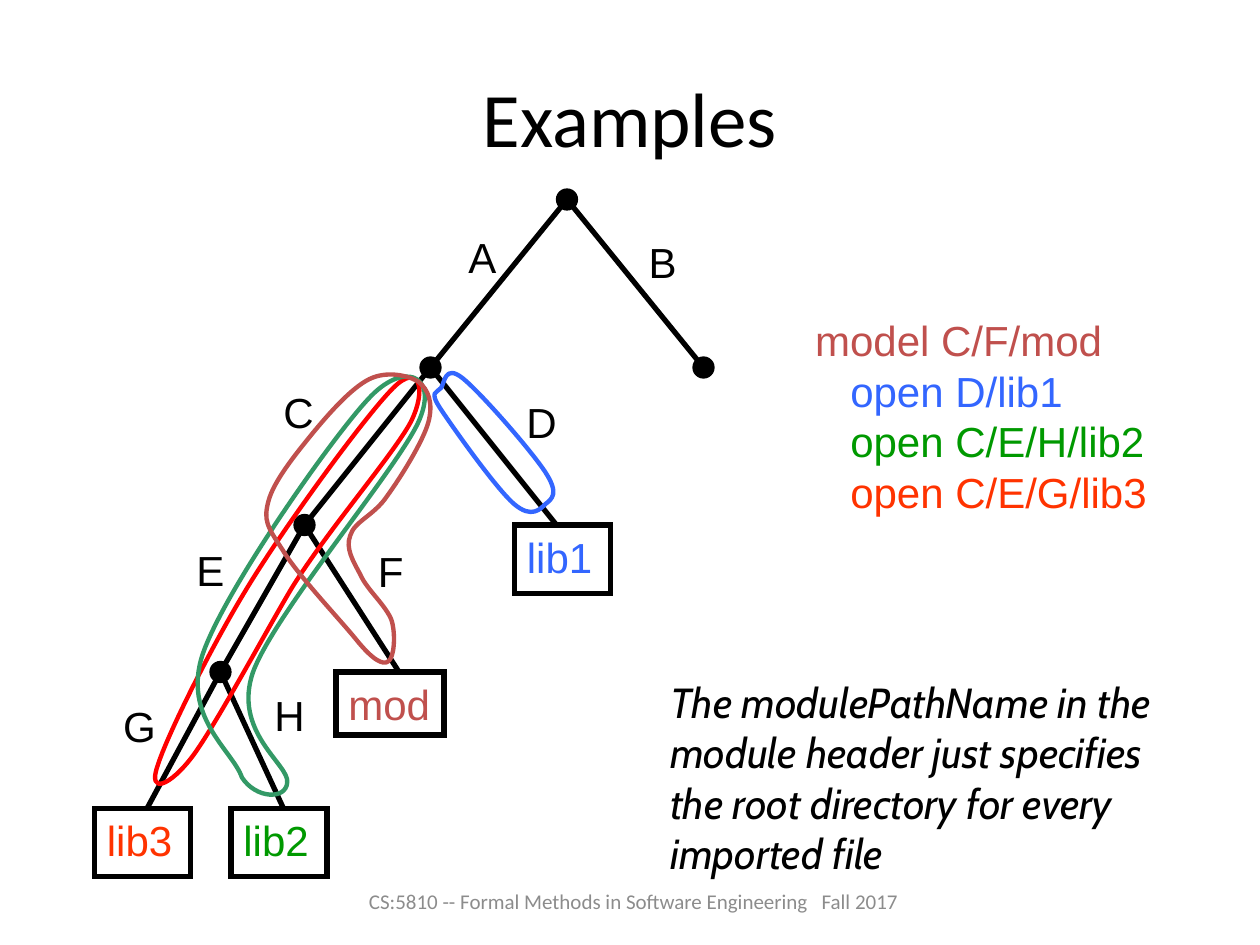
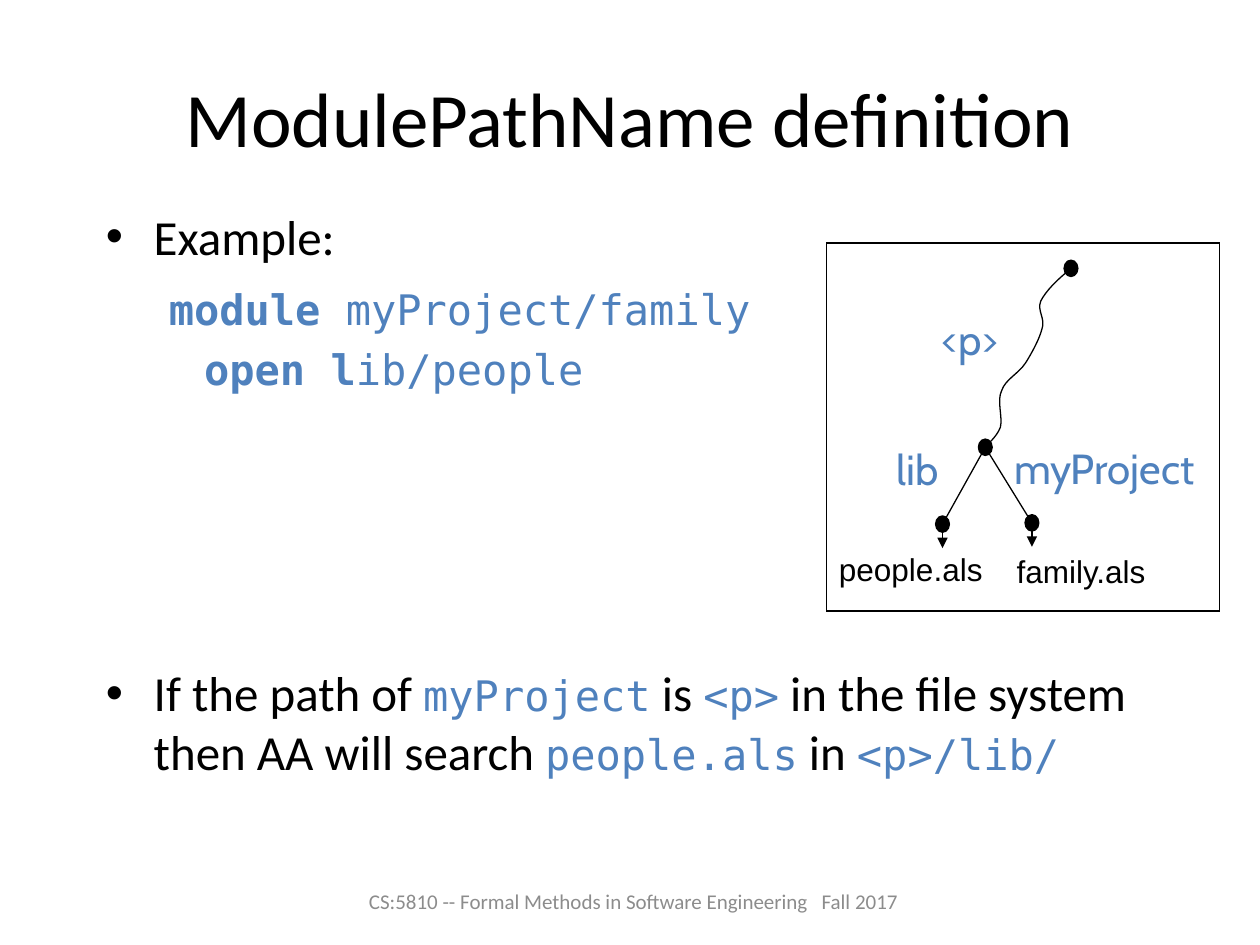
from lxml import etree
from pptx import Presentation
from pptx import util as u
from pptx.dml.color import RGBColor
from pptx.enum import shapes, text
from pptx.oxml import ns

COLORS = {
    "black": "000000", "gray": "8C8C8C", "code": "4F81BD", "brick": "C0504D",
    "blue": "3366FF", "green": "009900", "orange": "FF3300",
    "red": "FF0000", "sea": "339966",
}
CELL = 1 / 12  # the directory tree sits on a grid of twelfths of an inch
FOOTER = "CS:5810 -- Formal Methods in Software Engineering   Fall 2017"

TREE_NODES = {"root": (54, 19), "left": (41, 35), "right": (67, 35),
              "fork": (29, 50), "deep": (21, 64)}
TREE_LEAVES = {"lib1": (53, 50), "mod": (38, 64), "lib3": (14, 77), "lib2": (27, 77)}
TREE_EDGES = [("root", "left"), ("root", "right"), ("left", "lib1"), ("left", "fork"),
              ("fork", "deep"), ("fork", "mod"), ("deep", "lib3"), ("deep", "lib2")]
# file: column, row, width, height, colour
FILE_BOXES = {"lib3": (9, 77, 9.15, 6.5, "orange"), "lib1": (49, 50, 9.15, 6.5, "blue"),
              "lib2": (22, 77, 9.15, 6.5, "green"), "mod": (32, 64, 10.3, 6, "brick")}
EDGE_LABELS = {"A": (3.62, 1.79), "B": (5.05, 1.83), "C": (2.15, 3.02), "D": (4.08, 3.1),
               "E": (1.46, 4.27), "F": (2.9, 4.28), "G": (0.88, 5.51), "H": (2.08, 5.42)}
# Bezier points in inches: a start, then two handles and an end for each segment
PATH_LOOPS = {
    "red": [(2.32, 4.66), (2.6, 4.21), (3.12, 3.61), (3.26, 3.35),
            (3.39, 3.09), (3.33, 2.87), (3.12, 3.08), (2.91, 3.29), (2.3, 4.12), (1.99, 4.62),
            (1.68, 5.12), (1.32, 5.85), (1.25, 6.08), (1.17, 6.31), (1.35, 6.24), (1.53, 6),
            (1.71, 5.76), (2.15, 4.94), (2.32, 4.66)],
    "sea": [(1.92, 6.17), (2.03, 6.34), (2.27, 6.35), (2.28, 6.21),
            (2.3, 6.07), (1.84, 5.81), (2.01, 5.33), (2.19, 4.85), (3.18, 3.69), (3.33, 3.33),
            (3.48, 2.97), (3.2, 2.86), (2.92, 3.17), (2.63, 3.48), (1.78, 4.69), (1.61, 5.19),
            (1.44, 5.69), (1.85, 5.96), (1.92, 6.17)],
    "blue": [(4.08, 4), (4.22, 4.12), (4.29, 4.04), (4.33, 4),
             (4.38, 3.96), (4.44, 3.92), (4.33, 3.75), (4.22, 3.58), (3.81, 3.11), (3.67, 3),
             (3.53, 2.89), (3.53, 3.04), (3.5, 3.08), (3.47, 3.12), (3.4, 3.1), (3.5, 3.25),
             (3.6, 3.4), (3.94, 3.88), (4.08, 4)],
    "brick": [(2.83, 5.08), (2.96, 5.24), (3.04, 5.28), (3.08, 5.25),
              (3.13, 5.22), (3.14, 5.04), (3.11, 4.93), (3.07, 4.81), (2.91, 4.68), (2.86, 4.56),
              (2.8, 4.45), (2.74, 4.35), (2.78, 4.25), (2.81, 4.14), (2.97, 4.09), (3.07, 3.94),
              (3.18, 3.79), (3.36, 3.5), (3.4, 3.35), (3.44, 3.2), (3.4, 3.09), (3.32, 3.03),
              (3.24, 2.98), (3.07, 2.94), (2.93, 3.01), (2.79, 3.08), (2.62, 3.27), (2.48, 3.44),
              (2.35, 3.6), (2.17, 3.82), (2.13, 3.98), (2.09, 4.13), (2.12, 4.18), (2.24, 4.36),
              (2.35, 4.55), (2.71, 4.93), (2.83, 5.08)],
}
PROJECT_PATH = [(8.49, 2.14), (8.39, 2.22), (8.3, 2.31), (8.26, 2.39),
                (8.23, 2.47), (8.3, 2.53), (8.27, 2.61), (8.25, 2.69), (8.19, 2.8), (8.14, 2.88),
                (8.08, 2.97), (7.98, 3.01), (7.95, 3.1), (7.91, 3.18), (7.96, 3.31), (7.94, 3.39),
                (7.91, 3.47), (7.84, 3.52), (7.81, 3.56)]


def color(name):
    return RGBColor.from_string(COLORS[name])


def inches(*values):
    return [u.Inches(value) for value in values]


def cells(*counts):
    return [count * CELL for count in counts]


def add_run(paragraph, wording, size=24, font="Arial", tint="black", bold=False, italic=False):
    run = paragraph.add_run()
    run.text = wording
    run.font.name, run.font.size = font, u.Pt(size)
    run.font.bold, run.font.italic = bold, italic
    run.font.color.rgb = color(tint)


def indent(paragraph, margin, first_line=0):
    properties = paragraph._p.get_or_add_pPr()
    properties.set("marL", str(u.Inches(margin)))
    properties.set("indent", str(u.Inches(first_line)))
    return properties


def add_label(slide, place, wording, wrap=False, **style):
    """Add a text box with one run and return its text frame."""
    frame = slide.shapes.add_textbox(*inches(*place)).text_frame
    frame.word_wrap = wrap
    add_run(frame.paragraphs[0], wording, **style)
    return frame


def outline(shape, tint, width, fill=None):
    shape.shadow.inherit = False
    if fill:
        shape.fill.solid()
        shape.fill.fore_color.rgb = color(fill)
    else:
        shape.fill.background()
    shape.line.color.rgb = color(tint)
    shape.line.width = u.Pt(width)


def add_box(slide, place, width):
    """Add an unfilled rectangle with sharp corners."""
    shape = slide.shapes.add_shape(shapes.MSO_SHAPE.RECTANGLE, *inches(*place))
    outline(shape, "black", width)
    etree.SubElement(shape.line._get_or_add_ln(), ns.qn("a:miter"), lim="800000")
    return shape


def add_dot(slide, center, width, height):
    x, y = center
    shape = slide.shapes.add_shape(shapes.MSO_SHAPE.OVAL,
                                   *inches(x - width / 2, y - height / 2, width, height))
    outline(shape, "black", 0.75, fill="black")


def add_line(slide, start, end, width, arrow=False):
    line = slide.shapes.add_connector(shapes.MSO_CONNECTOR.STRAIGHT, *inches(*start, *end))
    line.line.color.rgb = color("black")
    line.line.width = u.Pt(width)
    if arrow:
        etree.SubElement(line.line._get_or_add_ln(), ns.qn("a:tailEnd"), type="triangle")
    etree.SubElement(line._element.spPr, ns.qn("a:effectLst"))


def add_curve(slide, points, tint, width):
    """Draw a chain of cubic Bezier segments, closed when it ends where it starts."""
    builder = slide.shapes.build_freeform(*inches(*points[0]))
    builder.add_line_segments([inches(*point) for point in points[1:]],
                              close=points[0] == points[-1])
    shape = builder.convert_to_shape()
    straight = list(shape._element.iter(ns.qn("a:lnTo")))
    for first in range(0, len(points) - 1, 3):
        bezier = etree.Element(ns.qn("a:cubicBezTo"))
        straight[first].addprevious(bezier)
        for segment in straight[first:first + 3]:
            bezier.append(segment[0])
            segment.getparent().remove(segment)
    outline(shape, tint, width)


def add_slide(presentation, layout, title):
    """Add a slide with the shared title and footer."""
    slide = presentation.slides.add_slide(presentation.slide_layouts[layout])
    shape = slide.shapes.title
    shape.left, shape.top, shape.width, shape.height = inches(0.5, 0.3, 9, 1.25)
    add_run(shape.text_frame.paragraphs[0], title, 44, "Calibri")
    footer = add_label(slide, (2.51, 6.95, 5.04, 0.4), FOOTER, wrap=True,
                       size=12, font="Calibri", tint="gray")
    footer.vertical_anchor = text.MSO_ANCHOR.MIDDLE
    footer.paragraphs[0].alignment = text.PP_ALIGN.CENTER
    return slide


def draw_directory_tree(slide):
    places = {**TREE_NODES, **TREE_LEAVES}
    for parent, child in TREE_EDGES:
        add_line(slide, cells(*places[parent]), cells(*places[child]), 3)
    for center in TREE_NODES.values():
        add_dot(slide, cells(*center), 2 * CELL, 2 * CELL)
    for name, (*place, tint) in FILE_BOXES.items():
        frame = add_box(slide, cells(*place), 3).text_frame
        frame.word_wrap = False
        frame.vertical_anchor = text.MSO_ANCHOR.TOP
        frame.paragraphs[0].alignment = text.PP_ALIGN.LEFT
        add_run(frame.paragraphs[0], name, tint=tint)
    for tint, points in PATH_LOOPS.items():
        add_curve(slide, points, tint, 2.5)
    for letter, corner in EDGE_LABELS.items():
        add_label(slide, (*corner, 0.43, 0.5), letter)


def build_examples(presentation):
    slide = add_slide(presentation, 5, "Examples")
    draw_directory_tree(slide)
    model = add_label(slide, (6.37, 2.45, 3.51, 1.72), "model C/F/mod", wrap=True, tint="brick")
    for wording, tint in (("open D/lib1", "blue"), ("open C/E/H/lib2", "green"),
                          ("open C/E/G/lib3", "orange")):
        paragraph = model.add_paragraph()
        indent(paragraph, 0.28)
        add_run(paragraph, wording, tint=tint)
    add_label(slide, (5.22, 5.32, 4.25, 1.72),
              "The modulePathName in the module header just specifies "
              "the root directory for every imported file",
              wrap=True, font="Cabin", italic=True)


def add_body_line(paragraph, pieces, before, bullet=True, margin=0.38):
    """Fill a body paragraph from (wording, kind) pieces: text, code or bold code."""
    paragraph.space_before, paragraph.space_after = u.Pt(before), u.Pt(0)
    properties = indent(paragraph, margin, -margin if bullet else 0)
    if not bullet:
        etree.SubElement(properties, ns.qn("a:buNone"))
    for wording, kind in pieces:
        if kind == "text":
            add_run(paragraph, wording, 28, "Calibri")
        else:
            add_run(paragraph, wording, 24, "DejaVu Sans Mono", "code", bold=kind == "bold")


def fill_body(body):
    body.left, body.top, body.width, body.height = inches(0.74, 1.59, 8.32, 5.33)
    frame = body.text_frame
    frame.auto_size = text.MSO_AUTO_SIZE.NONE
    add_body_line(frame.paragraphs[0], [("Example:", "text")], 0)
    add_body_line(frame.add_paragraph(), [("module ", "bold"), ("myProject/family", "code")],
                  10, bullet=False, margin=0.5)
    add_body_line(frame.add_paragraph(), [("open l", "bold"), ("ib/people", "code")],
                  5.5, bullet=False, margin=0.78)
    add_body_line(frame.add_paragraph(), [
        ("If the path of ", "text"), ("myProject", "code"), (" is ", "text"), ("<p>", "code"),
        (" in the file system then AA will search ", "text"), ("people.als", "code"),
        (" in ", "text"), ("<p>/lib/", "code")], 154)


def draw_project_tree(slide):
    add_box(slide, (6.56, 1.93, 3.12, 2.92), 1)
    add_curve(slide, PROJECT_PATH, "black", 0.75)
    top, fork, people, family = (8.5, 2.13), (7.82, 3.55), (7.48, 4.16), (8.19, 4.15)
    for center in (top, fork, people, family):
        add_dot(slide, center, 0.11, 0.13)
    for x, y in (people, family):
        add_line(slide, fork, (x, y), 0.75)
        add_line(slide, (x, y), (x, y + 0.19), 0.75, arrow=True)
    for wording, place in (("<p>", (7.37, 2.44, 0.88, 0.5)), ("lib", (7.02, 3.47, 0.54, 0.5)),
                           ("myProject", (7.95, 3.46, 1.67, 0.5))):
        add_label(slide, place, wording, font="Cabin", tint="code")
    add_label(slide, (6.56, 4.32, 1.35, 0.4), "people.als", size=18)
    add_label(slide, (7.97, 4.33, 1.24, 0.4), "family.als", size=18)


def build_definition(presentation):
    slide = add_slide(presentation, 1, "ModulePathName definition")
    fill_body(slide.placeholders[1])
    draw_project_tree(slide)


def main():
    presentation = Presentation()
    presentation.slide_width, presentation.slide_height = inches(10, 7.5)
    build_examples(presentation)
    build_definition(presentation)
    presentation.save("out.pptx")


if __name__ == "__main__":
    main()
